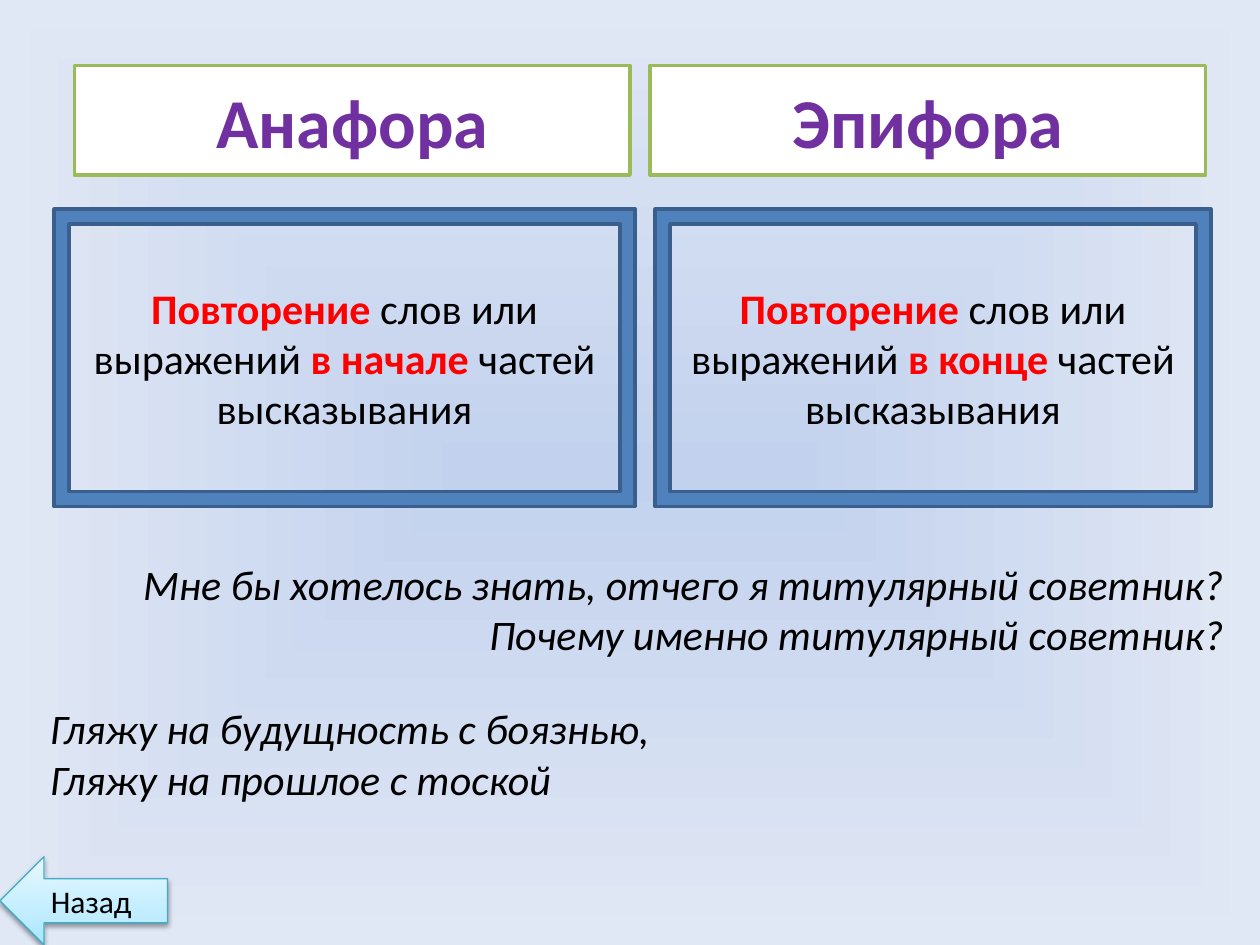
"""Build a slide that compares anaphora and epiphora."""
from lxml.etree import SubElement
from pptx import Presentation
from pptx.dml.color import RGBColor
from pptx.enum.shapes import MSO_SHAPE as Shape
from pptx.enum.text import MSO_ANCHOR as Anchor, PP_ALIGN as Align
from pptx.oxml.ns import qn
from pptx.util import Inches, Pt

COLORS = {
    "white": "FFFFFF", "black": "000000", "red": "FF0000", "purple": "7030A0",
    "green": "9BBB59", "blue": "4F81BD", "navy": "3A5F8C", "teal": "46AAC5",
    "center": "C2D1ED", "edge": "E1E8F5",
    "arrow_low": "A7E6FF", "arrow_mid": "C1EDFF", "arrow_high": "E7F8FF",
}


def color(name):
    return RGBColor.from_string(COLORS[name])


def write(shape, paragraphs, size=24, ink="black", bold=False, italic=False,
          align=Align.CENTER, anchor=Anchor.MIDDLE):
    """Write paragraphs of runs; every second run is a red bold highlight."""
    frame = shape.text_frame
    frame.word_wrap = True
    frame.vertical_anchor = anchor
    for number, pieces in enumerate(paragraphs):
        paragraph = frame.add_paragraph() if number else frame.paragraphs[0]
        paragraph.alignment = align
        for index, piece in enumerate(pieces):
            if not piece:
                continue
            highlight = index % 2 == 1
            run = paragraph.add_run()
            run.text = piece
            run.font.name = "Calibri"
            run.font.size = Pt(size)
            run.font.bold = bold or highlight
            run.font.italic = italic
            run.font.color.rgb = color("red" if highlight else ink)


deck = Presentation()
deck.slide_width, deck.slide_height = Inches(10), Inches(7.5)
slide = deck.slides.add_slide(deck.slide_layouts[6])
shapes = slide.shapes

slide.background.fill.gradient()
backdrop = next(slide.element.iter(qn("a:gradFill")))
backdrop.remove(backdrop.find(qn("a:lin")))
spread = SubElement(backdrop, qn("a:path"), {"path": "rect"})
SubElement(spread, qn("a:fillToRect"), dict.fromkeys("ltrb", "50000"))

terms = [("Анафора", 0.59), ("Эпифора", 5.16)]
definitions = [("в начале", 0.43, 4.61), ("в конце", 5.2, 4.41)]
panels = []
for term, left in terms:
    heading = shapes.add_shape(Shape.RECTANGLE, Inches(left), Inches(0.52), Inches(4.41), Inches(0.87))
    write(heading, [[term]], size=40, ink="purple", bold=True)
    panels.append((heading, "white", "green", 2))
for place, left, width in definitions:
    definition = shapes.add_shape(Shape.FRAME, Inches(left), Inches(1.66), Inches(width), Inches(2.36))
    definition.adjustments[0] = 0.05
    write(definition, [["", "Повторение", " слов или выражений ", place, " частей высказывания"]])
    panels.append((definition, "blue", "navy", 2))

quotes = [
    (["Мне бы хотелось знать, отчего я титулярный советник? Почему именно титулярный советник?"],
     0.16, 4.38, 9.65, 0.91, Align.RIGHT),
    (["Гляжу на будущность с боязнью,", "Гляжу на прошлое с тоской"],
     0.3, 5.53, 9.03, 1.51, Align.LEFT),
]
for lines, left, top, width, height, align in quotes:
    quote = shapes.add_textbox(Inches(left), Inches(top), Inches(width), Inches(height))
    write(quote, [[line] for line in lines], italic=True, align=align, anchor=Anchor.TOP)

back = shapes.add_shape(Shape.LEFT_ARROW, 0, Inches(6.8), Inches(1.33), Inches(0.7))
write(back, [["Назад "]], size=18)
panels.append((back, None, "teal", 0.75))

for panel, fill, outline, weight in panels:
    panel.shadow.inherit = False
    if fill:
        panel.fill.solid()
        panel.fill.fore_color.rgb = color(fill)
    else:
        panel.fill.gradient()
    panel.line.color.rgb = color(outline)
    panel.line.width = Pt(weight)

arrow_blend = next(back.element.iter(qn("a:gradFill")))
arrow_blend.find(qn("a:lin")).set("ang", str(270 * 60000))
blends = [
    (backdrop, [(0, "center"), (100, "edge")]),
    (arrow_blend, [(0, "arrow_low"), (35, "arrow_mid"), (100, "arrow_high")]),
]
for blend, stops in blends:
    stop_list = blend.find(qn("a:gsLst"))
    for old_stop in list(stop_list):
        stop_list.remove(old_stop)
    for percent, name in stops:
        stop = SubElement(stop_list, qn("a:gs"), pos=str(percent * 1000))
        SubElement(stop, qn("a:srgbClr"), val=COLORS[name])

shadow = SubElement(next(back.element.iter(qn("a:effectLst"))), qn("a:outerShdw"), {
    "blurRad": str(Pt(3.1)), "dist": str(Pt(1.6)), "dir": str(90 * 60000), "rotWithShape": "0"})
shade = SubElement(shadow, qn("a:srgbClr"), val=COLORS["black"])
SubElement(shade, qn("a:alpha"), val="38000")

deck.save("out.pptx")
